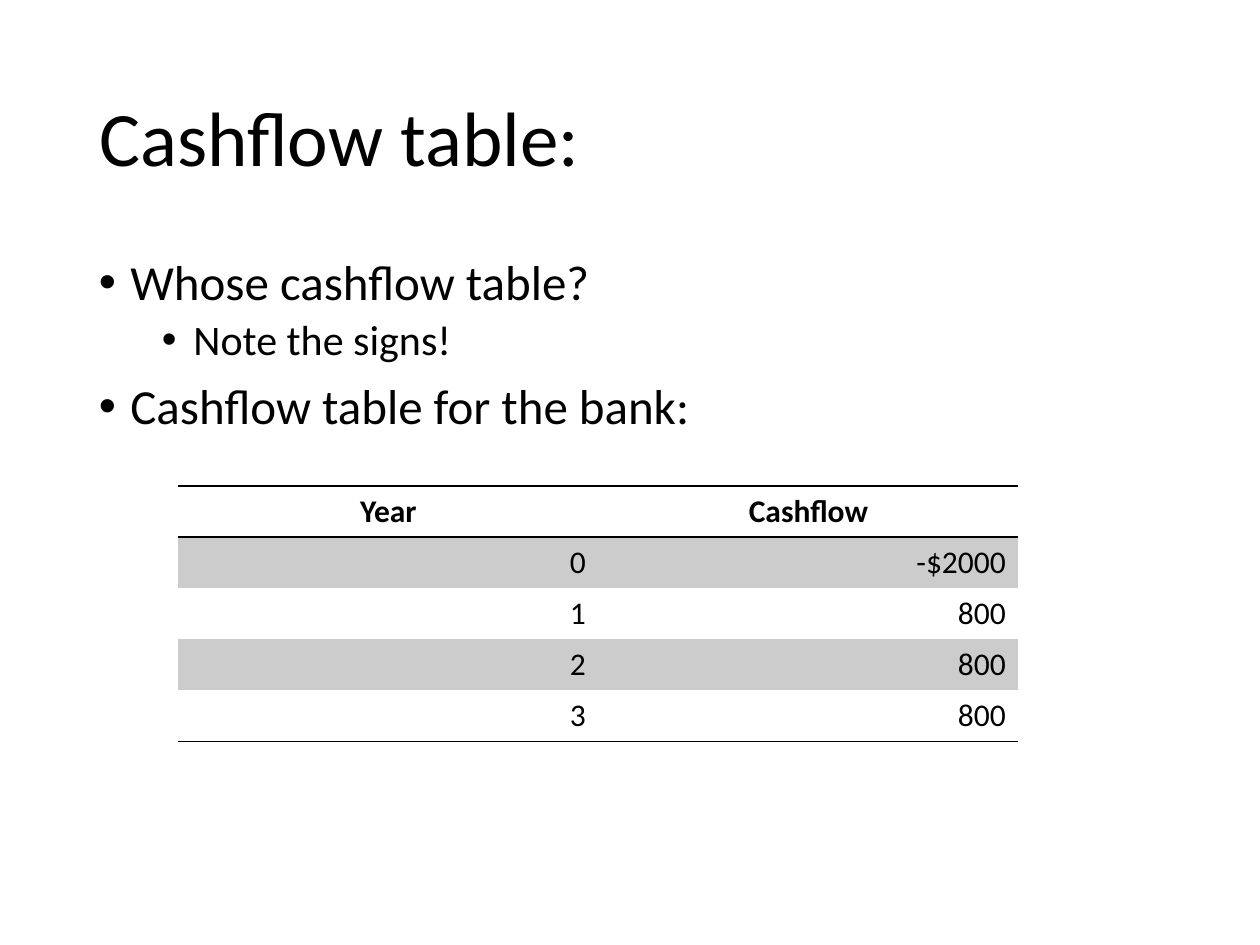
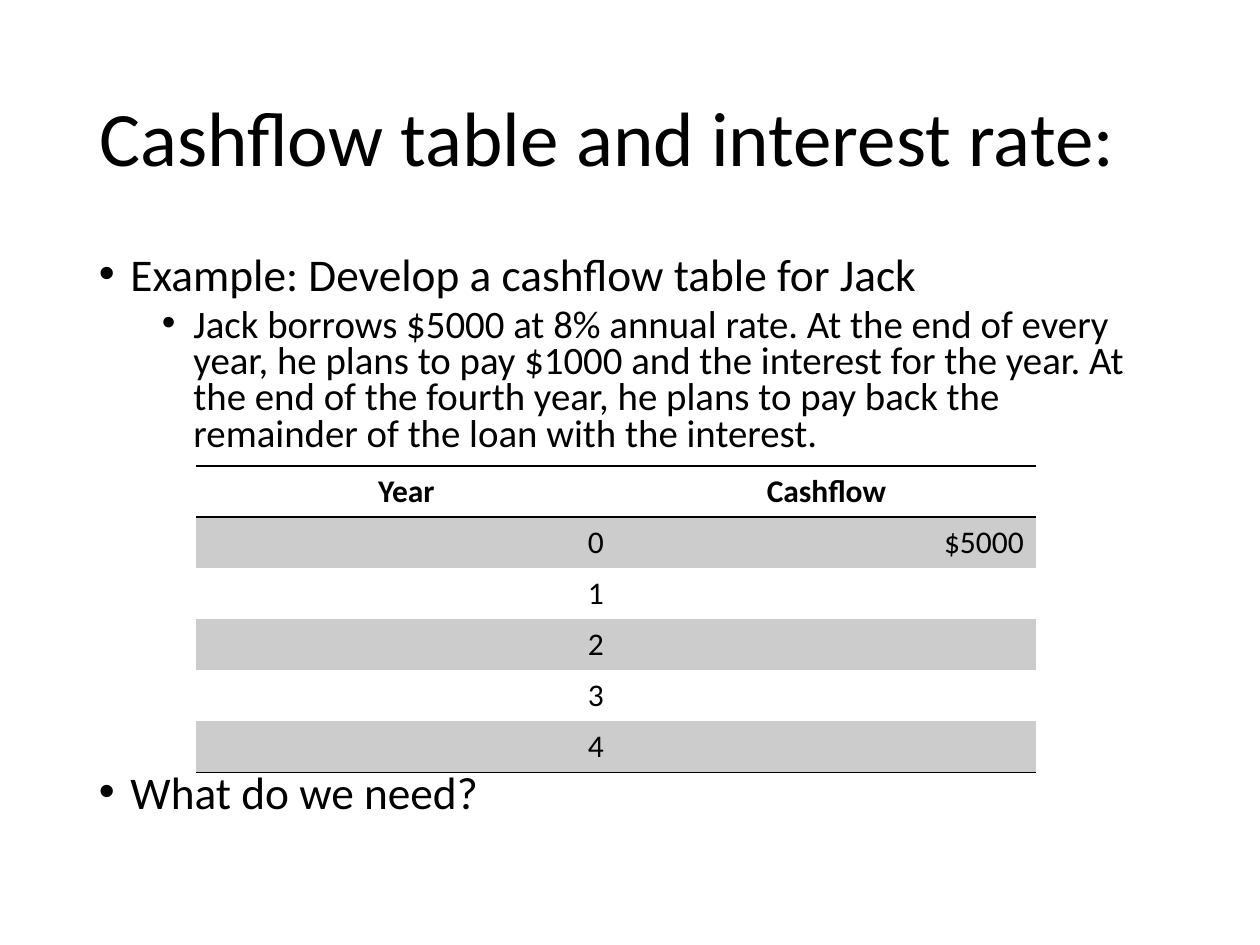
from pptx import Presentation
from pptx.dml.color import RGBColor
from pptx.enum.text import MSO_ANCHOR, MSO_AUTO_SIZE, PP_ALIGN
from pptx.oxml import parse_xml
from pptx.oxml.ns import nsdecls, qn
from pptx.util import Pt

BLACK = RGBColor(0x00, 0x00, 0x00)
BAND_GREY = RGBColor(0xCC, 0xCC, 0xCC)
FONT = "Calibri"
PLAIN_TABLE_STYLE = "{2D5ABB26-0587-4C30-8999-92F81FD0307C}"
TITLE_ONLY = 5

TITLE_BOX = (49.5, 28.75, 621, 104.4)
BODY_BOX = (49.5, 143.75, 621, 342.6)
COLUMN_WIDTH, ROW_HEIGHT = 240, 29.2
INDENT, LEVEL_STEP = 18, 36
SPACE_BEFORE = (10, 5)


def add_run(paragraph, text, size, bold=False):
    run = paragraph.add_run()
    run.text = text
    run.font.name = FONT
    run.font.size = Pt(size)
    run.font.bold = bold
    run.font.color.rgb = BLACK


def place(shape, box):
    shape.left, shape.top, shape.width, shape.height = (Pt(length) for length in box)


def add_title_slide(presentation, title):
    slide = presentation.slides.add_slide(presentation.slide_layouts[TITLE_ONLY])
    place(slide.shapes.title, TITLE_BOX)
    frame = slide.shapes.title.text_frame
    frame.auto_size = MSO_AUTO_SIZE.NONE
    frame.vertical_anchor = MSO_ANCHOR.MIDDLE
    paragraph = frame.paragraphs[0]
    paragraph.alignment = PP_ALIGN.LEFT
    paragraph.line_spacing = 0.9
    add_run(paragraph, title, 44)
    return slide


def add_bullets(slide, box, items, sizes, line_spacing):
    frame = slide.shapes.add_textbox(*(Pt(length) for length in box)).text_frame
    frame.word_wrap = True
    for index, (level, text, *gap) in enumerate(items):
        paragraph = frame.add_paragraph() if index else frame.paragraphs[0]
        paragraph.level = level
        paragraph.line_spacing = line_spacing
        paragraph.space_before = Pt(gap[0] if gap else SPACE_BEFORE[level])
        properties = paragraph._p.get_or_add_pPr()
        properties.set("marL", str(Pt(INDENT + level * LEVEL_STEP)))
        properties.set("indent", str(-Pt(INDENT)))
        properties.append(parse_xml(f'<a:buFont {nsdecls("a")} typeface="Arial"/>'))
        properties.append(parse_xml(f'<a:buChar {nsdecls("a")} char="•"/>'))
        add_run(paragraph, text, sizes[level])


def add_rules(cell, edges):
    for index, edge in enumerate(edges):
        cell._tc.get_or_add_tcPr().insert(index, parse_xml(
            f'<a:{edge} {nsdecls("a")} w="{Pt(1)}"><a:solidFill>'
            f'<a:srgbClr val="{BLACK}"/></a:solidFill></a:{edge}>'))


def add_cashflow_table(slide, left, top, cashflows):
    rows = [("Year", "Cashflow")]
    rows += [(str(year), amount) for year, amount in enumerate(cashflows)]
    table = slide.shapes.add_table(
        len(rows), 2, Pt(left), Pt(top),
        Pt(2 * COLUMN_WIDTH), Pt(len(rows) * ROW_HEIGHT)).table
    table._tbl.tblPr.find(qn("a:tableStyleId")).text = PLAIN_TABLE_STYLE
    for row_index, values in enumerate(rows):
        header = row_index == 0
        for column_index, text in enumerate(values):
            cell = table.cell(row_index, column_index)
            if row_index % 2:
                cell.fill.solid()
                cell.fill.fore_color.rgb = BAND_GREY
            else:
                cell.fill.background()
            if header:
                add_rules(cell, ("lnT", "lnB"))
            elif row_index == len(rows) - 1:
                add_rules(cell, ("lnB",))
            paragraph = cell.text_frame.paragraphs[0]
            paragraph.alignment = PP_ALIGN.CENTER if header else PP_ALIGN.RIGHT
            if text:
                add_run(paragraph, text, 18, header)


def build_bank_slide(presentation):
    slide = add_title_slide(presentation, "Cashflow table:")
    add_bullets(slide, BODY_BOX, [
        (0, "Whose cashflow table?"),
        (1, "Note the signs!"),
        (0, "Cashflow table for the bank:"),
    ], (28, 24), 0.9)
    add_cashflow_table(slide, 102, 277.75, ["-$2000", "800", "800", "800"])


def build_interest_slide(presentation):
    slide = add_title_slide(presentation, "Cashflow table and interest rate:")
    add_bullets(slide, BODY_BOX, [
        (0, "Example: Develop a cashflow table for Jack"),
        (1, "Jack borrows $5000 at 8% annual rate. At the end of every year, "
            "he plans to pay $1000 and the interest for the year. At the end of "
            "the fourth year, he plans to pay back the remainder of the loan "
            "with the interest."),
        (0, "What do we need?", 183.6),
    ], (25.9, 22.2), 0.78)
    add_cashflow_table(slide, 112.25, 266.25, ["$5000", "", "", "", ""])


def main():
    presentation = Presentation()
    presentation.slide_width, presentation.slide_height = Pt(720), Pt(540)
    build_bank_slide(presentation)
    build_interest_slide(presentation)
    presentation.save("out.pptx")


if __name__ == "__main__":
    main()
